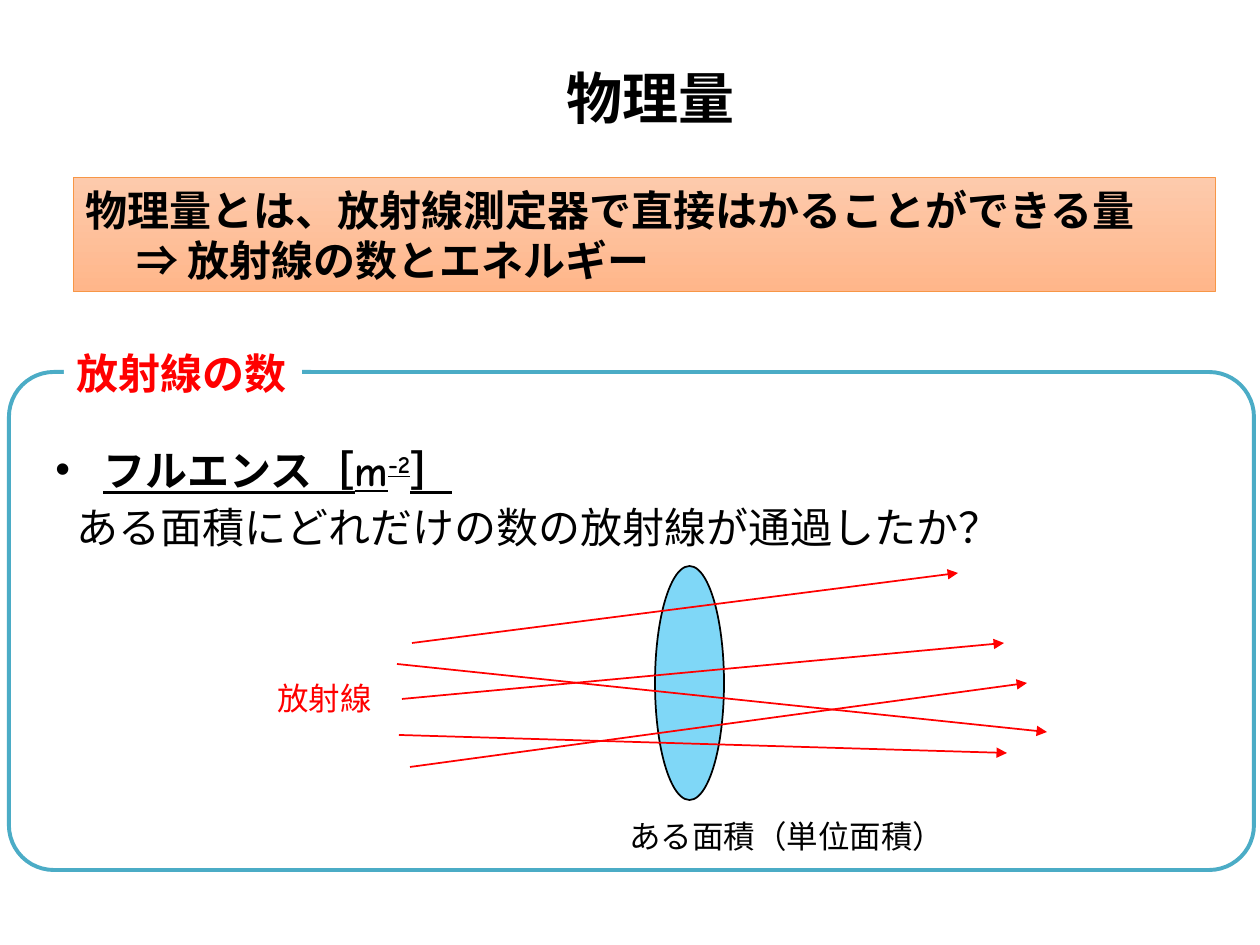
from dataclasses import dataclass
from typing import Any

from lxml import etree
from pptx import Presentation
from pptx.dml.color import RGBColor
from pptx.enum import shapes, text
from pptx.oxml import ns
from pptx.util import Pt

SCALE = 914400 / 126
FONT = "Comic Neue"
BLACK = RGBColor(0x00, 0x00, 0x00)
WHITE = RGBColor(0xFF, 0xFF, 0xFF)
RED = RGBColor(0xFF, 0x00, 0x00)
SKY = RGBColor(0x00, 0xB0, 0xF0)
TEAL = RGBColor(0x4B, 0xAC, 0xC6)
ORANGE = RGBColor(0xF7, 0x96, 0x46)
PEACH = RGBColor(0xFD, 0xCA, 0xAC)
APRICOT = RGBColor(0xFF, 0xB6, 0x8A)

Box = tuple[int, int, int, int]
PLAIN = {"name": FONT, "size": Pt(24)}
BOLD = PLAIN | {"bold": True}
SMALL = PLAIN | {"size": Pt(18)}


@dataclass(frozen=True)
class Label:
    box: Box
    words: str
    style: dict[str, Any]
    color: RGBColor = BLACK
    wrap: bool = False


@dataclass(frozen=True)
class Ray:
    start: tuple[int, int]
    end: tuple[int, int]


LABELS = [
    Label((64, 341, 238, 64), "放射線の数", BOLD, RED),
    Label((617, 811, 344, 50), "ある面積（単位面積）", SMALL),
    Label((265, 673, 121, 50), "放射線", SMALL, RED),
]
CLAIM = Label((64, 495, 1211, 64), "ある面積にどれだけの数の放射線が通過したか？", PLAIN, wrap=True)
RAYS = [
    Ray((412, 643), (958, 573)),
    Ray((397, 664), (1047, 732)),
    Ray((399, 735), (1007, 753)),
    Ray((410, 767), (1027, 683)),
    Ray((402, 699), (1004, 643)),
]


def px(*vals: int) -> list[int]:
    return [round(v * SCALE) for v in vals]


def add(parent: Any, tag: str, **attrs: str) -> Any:
    return etree.SubElement(parent, ns.qn(tag), attrs)


def put(para: Any, words: str, style: dict[str, Any], color: RGBColor = BLACK) -> Any:
    run = para.add_run()
    run.text = words
    for key, val in style.items():
        setattr(run.font, key, val)
    run.font.color.rgb = color
    return run


def fit(shape: Any, wrap: bool) -> Any:
    frame = shape.text_frame
    vals = {
        "word_wrap": wrap,
        "auto_size": text.MSO_AUTO_SIZE.SHAPE_TO_FIT_TEXT,
        "vertical_anchor": text.MSO_ANCHOR.TOP,
    }
    for key, val in vals.items():
        setattr(frame, key, val)
    frame.paragraphs[0].alignment = text.PP_ALIGN.LEFT
    return frame


def form(slide: Any, kind: Any, box: Box, line: RGBColor, width: float) -> Any:
    shape = slide.shapes.add_shape(kind, *px(*box))
    shape.shadow.inherit = False
    shape.line.color.rgb = line
    shape.line.width = Pt(width)
    return shape


def note(slide: Any, label: Label) -> Any:
    shape = slide.shapes.add_textbox(*px(*label.box))
    put(fit(shape, label.wrap).paragraphs[0], label.words, label.style, label.color)
    return shape


def beam(slide: Any, ray: Ray) -> None:
    line = slide.shapes.add_connector(
        shapes.MSO_CONNECTOR.STRAIGHT, *px(*ray.start, *ray.end)
    )
    line.line.color.rgb = RED
    line.line.width = Pt(1)
    add(line.line._get_or_add_ln(), "a:tailEnd", type="triangle")
    add(line._element.spPr, "a:effectLst")


def head(slide: Any) -> None:
    title = slide.shapes.title
    for key, val in zip(("left", "top", "width", "height"), px(108, 52, 1086, 99)):
        setattr(title, key, val)
    title.text_frame.vertical_anchor = text.MSO_ANCHOR.MIDDLE
    para = title.text_frame.paragraphs[0]
    para.alignment = text.PP_ALIGN.CENTER
    para.line_spacing = 0.9
    put(para, "物理量", BOLD | {"size": Pt(32)})


def term(slide: Any) -> None:
    shape = slide.shapes.add_textbox(*px(43, 438, 648, 64))
    para = fit(shape, True).paragraphs[0]
    props = para._p.get_or_add_pPr()
    (gap,) = px(48)
    props.set("marL", str(gap))
    props.set("indent", str(-gap))
    add(props, "a:buFont", typeface="Arial")
    add(props, "a:buChar", char="•")
    style = BOLD | {"underline": True}
    put(para, "フルエンス［m", style)
    power = put(para, "-2", style)
    power.font._element.set("baseline", "30000")
    put(para, "］", style)


def lens(slide: Any) -> None:
    shape = form(slide, shapes.MSO_SHAPE.OVAL, (655, 566, 69, 234), BLACK, 1)
    shape.fill.solid()
    shape.fill.fore_color.rgb = SKY
    tint = shape._element.spPr.find(ns.qn("a:solidFill")).find(ns.qn("a:srgbClr"))
    add(tint, "a:alpha", val="50000")


def banner(slide: Any) -> None:
    shape = form(slide, shapes.MSO_SHAPE.RECTANGLE, (73, 178, 1142, 114), ORANGE, 0.5)
    shape.fill.gradient()
    shape.fill.gradient_angle = 270
    for stop, color in zip(shape.fill.gradient_stops, (PEACH, APRICOT)):
        stop.color.rgb = color
    frame = fit(shape, True)
    put(frame.paragraphs[0], "物理量とは、放射線測定器で直接はかることができる量", BOLD)
    para = frame.add_paragraph()
    para.alignment = text.PP_ALIGN.LEFT
    para._p.get_or_add_pPr().set("marL", str(px(51)[0]))
    put(para, "⇒ 放射線の数とエネルギー", BOLD)


def panel(slide: Any) -> None:
    shape = form(
        slide, shapes.MSO_SHAPE.ROUNDED_RECTANGLE, (9, 372, 1245, 498), TEAL, 2.25
    )
    shape.adjustments[0] = 0.09
    shape.fill.background()


def main() -> None:
    deck = Presentation()
    deck.slide_width, deck.slide_height = px(1260, 945)
    slide = deck.slides.add_slide(deck.slide_layouts[5])
    head(slide)
    term(slide)
    note(slide, CLAIM)
    lens(slide)
    for ray in RAYS:
        beam(slide, ray)
    banner(slide)
    panel(slide)
    tab, *_ = [note(slide, label) for label in LABELS]
    tab.fill.solid()
    tab.fill.fore_color.rgb = WHITE
    deck.save("out.pptx")


if __name__ == "__main__":
    main()
